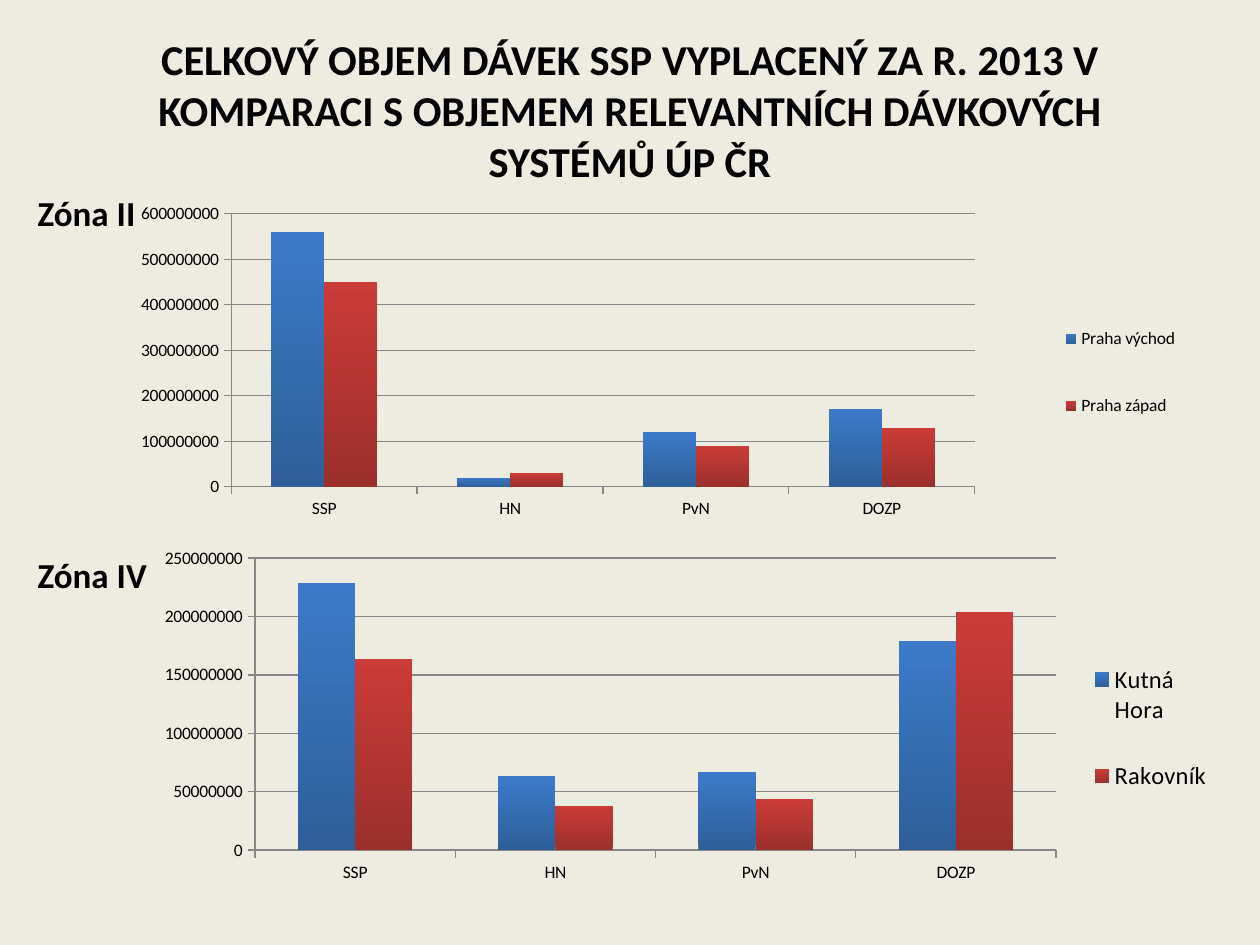
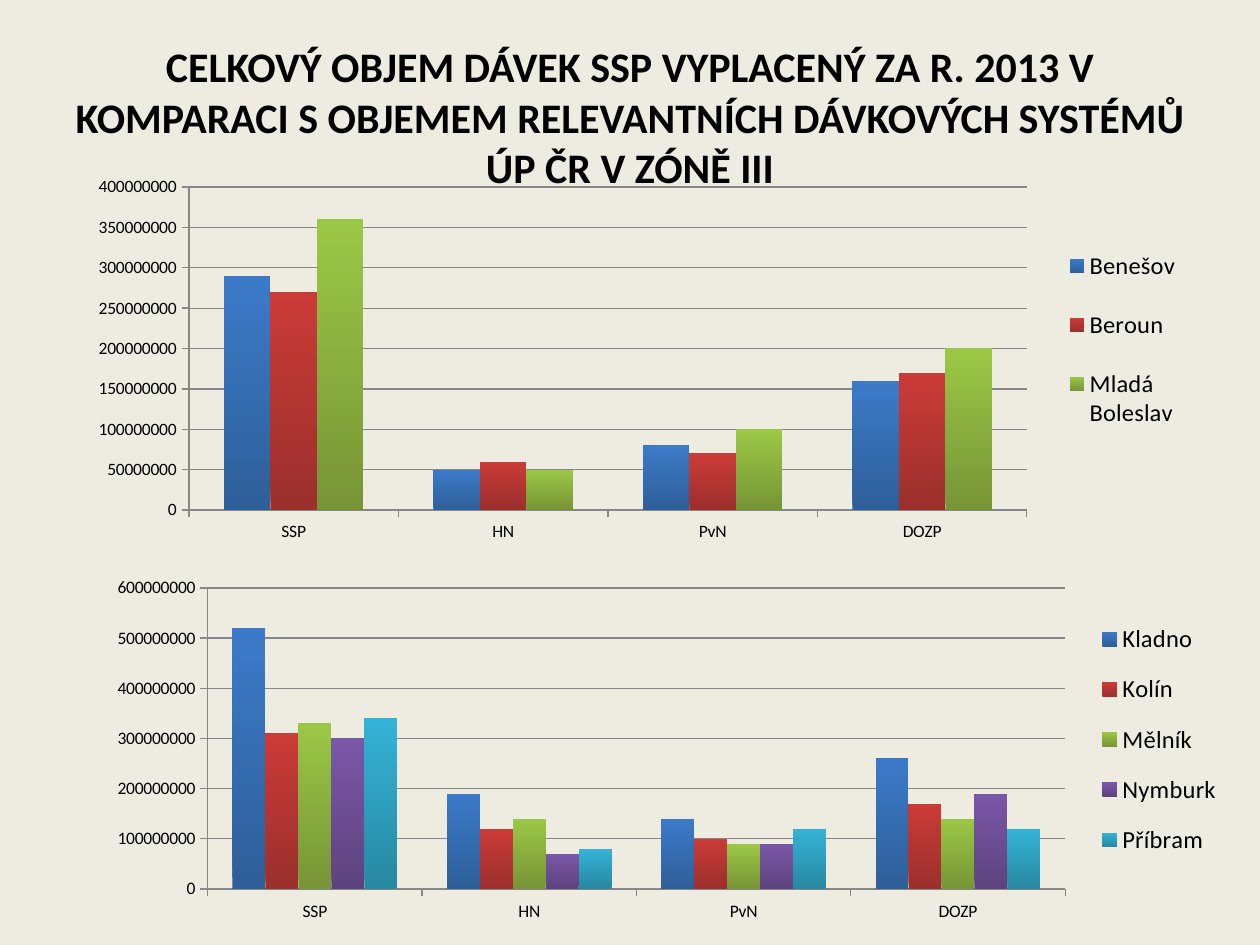
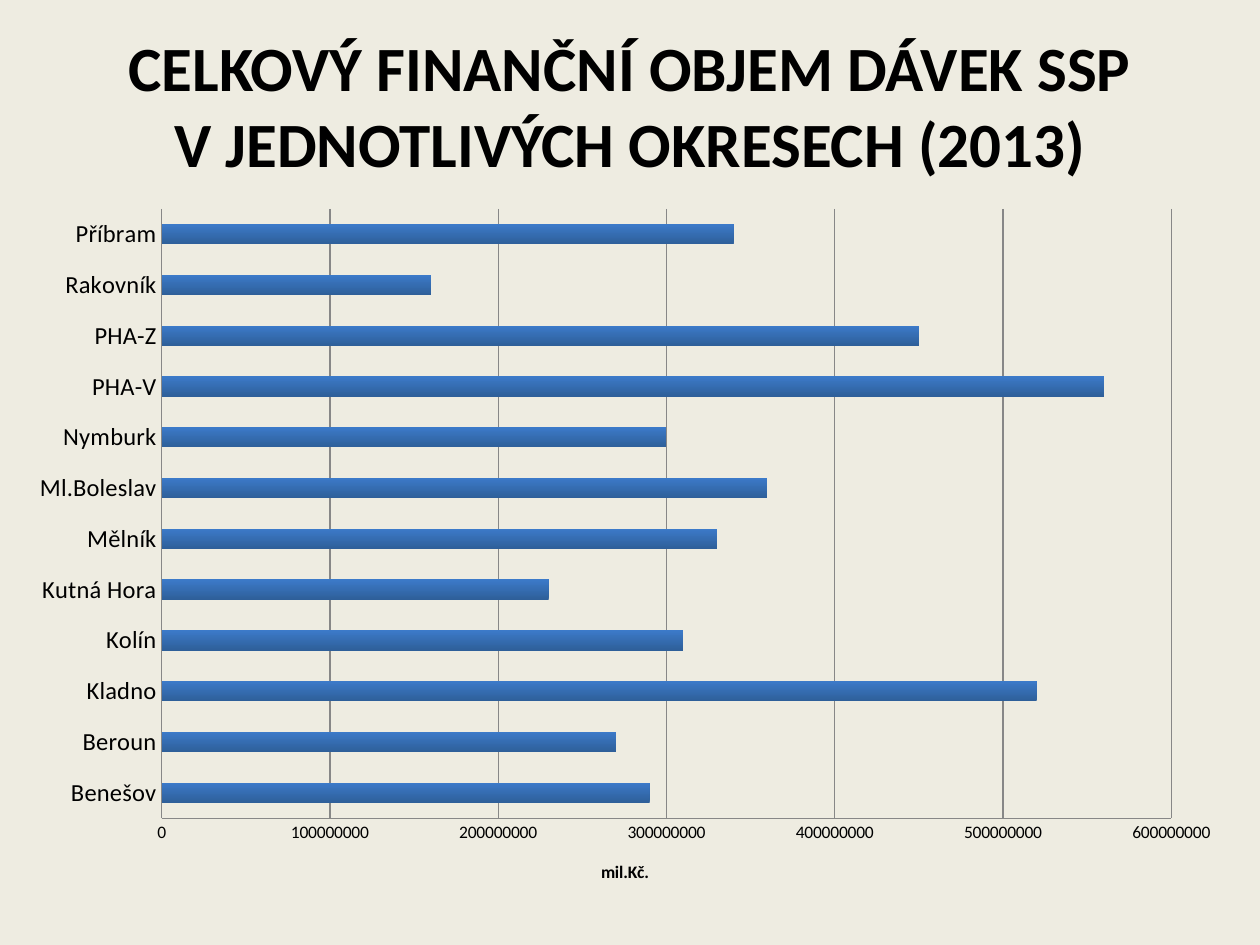
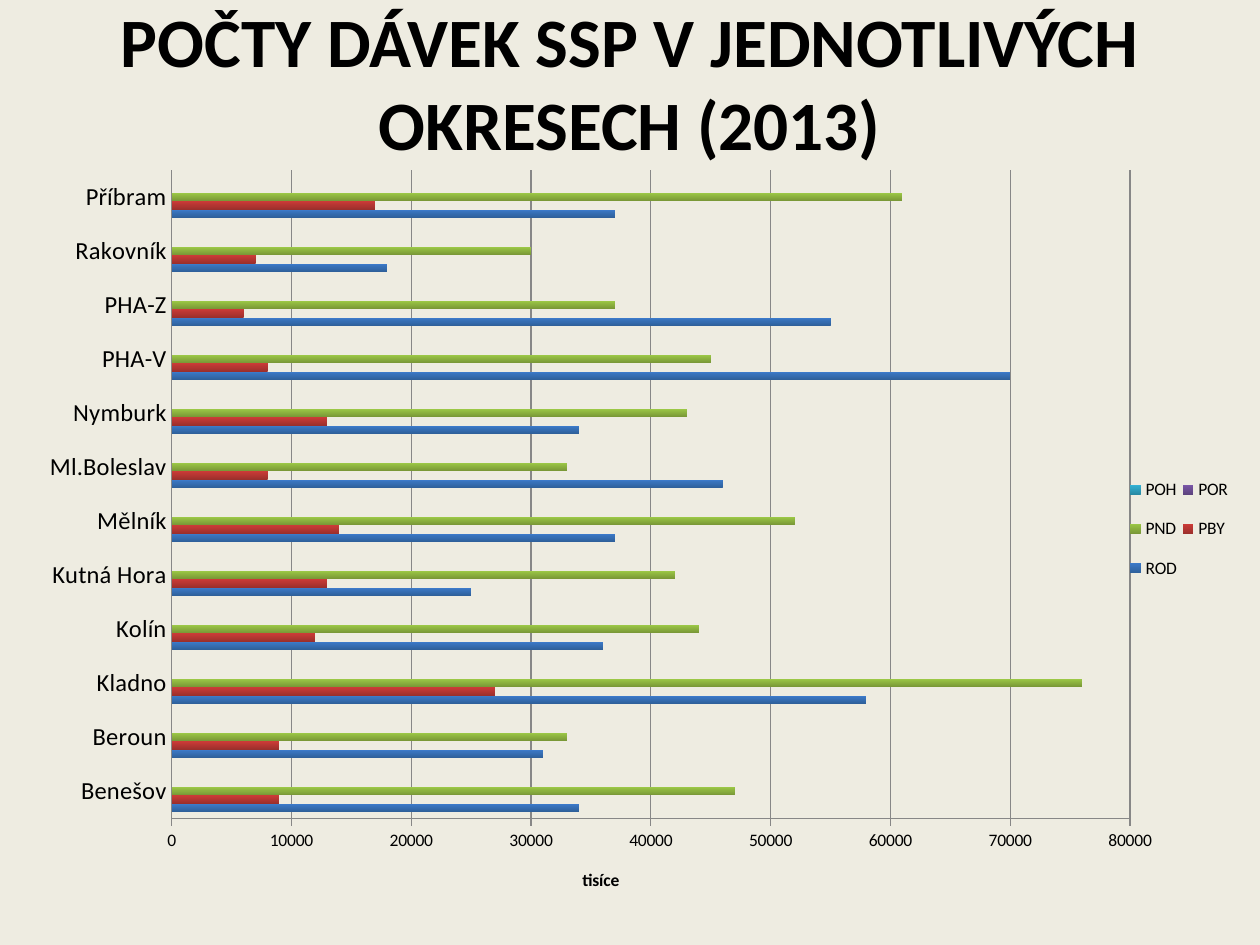
from pptx import Presentation
from pptx.chart.data import CategoryChartData
from pptx.dml.color import RGBColor
from pptx.enum.chart import XL_CHART_TYPE as ChartType, XL_LEGEND_POSITION as LegendPosition
from pptx.enum.chart import XL_TICK_MARK as TickMark
from pptx.enum.text import MSO_ANCHOR as Anchor, PP_ALIGN as Align
from pptx.oxml import parse_xml
from pptx.oxml.ns import nsdecls
from pptx.util import Inches, Pt

# Shared look
FONT, BLACK, GRID, PAPER = "Calibri", "000000", "878787", "EEECE1"
# Each series runs from a dark foot to a light top
SERIES_COLOURS = [("2E5F99", "3C7AC9"), ("9B2F2C", "CB3B37"), ("779536", "9BC746"),
                  ("5D437E", "7B57A8"), ("2888A2", "34B3D6")]
COLUMN, BAR = ChartType.COLUMN_CLUSTERED, ChartType.BAR_CLUSTERED
MILLION, THOUSAND = 1_000_000, 1_000

# Content
BENEFITS = ["SSP", "HN", "PvN", "DOZP"]
DISTRICTS = ["Benešov", "Beroun", "Kladno", "Kolín", "Kutná Hora", "Mělník",
             "Ml.Boleslav", "Nymburk", "PHA-V", "PHA-Z", "Rakovník", "Příbram"]
COMPARISON = ("CELKOVÝ OBJEM DÁVEK SSP VYPLACENÝ ZA R. 2013 V KOMPARACI "
              "S OBJEMEM RELEVANTNÍCH DÁVKOVÝCH SYSTÉMŮ ÚP ČR")

# Boxes are left, top, width, height in inches; plot and legend are shares of the chart.
SLIDES = [
    dict(title=COMPARISON, box=(0.5, 0.36, 9, 1.02), size=24.3,
         zones=["Zóna II", "Zóna IV"],
         charts=[
             dict(kind=COLUMN, box=(0.75, 1.62, 8.9, 2.6), cats=BENEFITS, unit=MILLION,
                  top=600, step=100, plot=(0.122, 0.022, 0.663, 0.84),
                  legend=(0.85, 0.23, 0.13, 0.56), legend_size=10,
                  series={"Praha východ": [560, 20, 120, 170],
                          "Praha západ": [450, 30, 90, 130]}),
             dict(kind=COLUMN, box=(1.14, 4.3, 8.5, 2.76), cats=BENEFITS, unit=MILLION,
                  top=250, step=50, plot=(0.104, 0.047, 0.748, 0.84),
                  legend=(0.88, 0.25, 0.12, 0.57), legend_size=14,
                  series={"Kutná Hora": [229, 63, 67, 179],
                          "Rakovník": [164, 38, 44, 204]})]),
    dict(title=COMPARISON + " V\u00a0ZÓNĚ III", box=(0.5, 0.3, 9, 1.25), size=24,
         charts=[
             dict(kind=COLUMN, box=(0.75, 1.39, 8.82, 2.91), cats=BENEFITS, unit=MILLION,
                  top=400, step=50, plot=(0.085, 0.033, 0.754, 0.892),
                  legend=(0.86, 0.13, 0.13, 0.65), legend_size=14,
                  series={"Benešov": [290, 50, 80, 160],
                          "Beroun": [270, 60, 70, 170],
                          "Mladá Boleslav": [360, 50, 100, 200]}),
             dict(kind=COLUMN, box=(0.75, 4.54, 8.99, 2.83), cats=BENEFITS, unit=MILLION,
                  top=600, step=100, plot=(0.1, 0.045, 0.757, 0.844),
                  legend=(0.88, 0.09, 0.12, 0.76), legend_size=14,
                  series={"Kladno": [520, 190, 140, 260],
                          "Kolín": [310, 120, 100, 170],
                          "Mělník": [330, 140, 90, 140],
                          "Nymburk": [300, 70, 90, 190],
                          "Příbram": [340, 80, 120, 120]})]),
    dict(title="CELKOVÝ FINANČNÍ OBJEM DÁVEK SSP V\u00a0JEDNOTLIVÝCH OKRESECH (2013)",
         box=(0.5, 0.36, 9, 0.94), size=36,
         charts=[
             dict(kind=BAR, box=(0.12, 1.55, 9.69, 5.67), cats=DISTRICTS, unit=MILLION,
                  top=600, step=100, plot=(0.12, 0.019, 0.827, 0.853),
                  axis_title="mil.Kč.", value_tick=TickMark.NONE,
                  series={"Series 1": [290, 270, 520, 310, 230, 330,
                                       360, 300, 560, 450, 160, 340]})]),
    dict(title="POČTY DÁVEK SSP V\u00a0JEDNOTLIVÝCH OKRESECH (2013)",
         box=(0.5, 0.3, 9, 1.25), size=39.6, foot=0.61,
         charts=[
             dict(kind=BAR, box=(0.2, 1.23, 9.69, 6.06), cats=DISTRICTS, unit=THOUSAND,
                  top=80, step=10, plot=(0.12, 0.02, 0.785, 0.849),
                  legend=(0.9, 0.4, 0.09, 0.18), legend_size=10, axis_title="tisíce",
                  series={"ROD": [34, 31, 58, 36, 25, 37, 46, 34, 70, 55, 18, 37],
                          "PBY": [9, 9, 27, 12, 13, 14, 8, 13, 8, 6, 7, 17],
                          "PND": [47, 33, 76, 44, 42, 52, 33, 43, 45, 37, 30, 61],
                          "POR": [0] * 12,
                          "POH": [0] * 12})]),
]


def colour(hex_string):
    return RGBColor.from_string(hex_string)


def style_font(font, size, bold=False):
    font.name, font.size, font.bold = FONT, Pt(size), bold
    font.color.rgb = colour(BLACK)


def add_text(page, lines, box, size, align=Align.LEFT, anchor=Anchor.TOP,
             gap=0, side=0.1, foot=0.05):
    frame = page.shapes.add_textbox(*map(Inches, box)).text_frame
    frame.word_wrap, frame.vertical_anchor = True, anchor
    frame.margin_left = frame.margin_right = Inches(side)
    frame.margin_bottom = Inches(foot)
    frame.text = "\n".join(lines)
    for index, para in enumerate(frame.paragraphs):
        para.alignment = align
        para.space_before = Pt(gap if index else 0)
        for span in para.runs:
            style_font(span.font, size, bold=True)


def place(parent, index, shares, inner=False):
    """Fix a plot area or legend at shares of its chart."""
    for layout in parent.xpath("c:layout"):
        parent.remove(layout)
    target = '<c:layoutTarget val="inner"/>' if inner else ""
    modes = '<c:xMode val="edge"/><c:yMode val="edge"/>'
    sizes = "".join(f'<c:{name} val="{share}"/>' for name, share in zip("xywh", shares))
    parent.insert(index, parse_xml(
        f'<c:layout {nsdecls("c")}><c:manualLayout>{target}{modes}{sizes}'
        '</c:manualLayout></c:layout>'))


def style_line(line):
    line.color.rgb, line.width = colour(GRID), Pt(0.75)


def add_axes(chart, item):
    is_bar = item["kind"] == BAR
    cats, values = chart.category_axis, chart.value_axis
    cats.major_tick_mark = TickMark.NONE if is_bar else TickMark.OUTSIDE
    values.major_tick_mark = item.get("value_tick", TickMark.OUTSIDE)
    for axis, size in ((cats, 14 if is_bar else 10), (values, 10)):
        axis.minor_tick_mark = TickMark.NONE
        style_font(axis.tick_labels.font, size)
        style_line(axis.format.line)
    values.minimum_scale = 0
    values.maximum_scale = item["top"] * item["unit"]
    values.major_unit = item["step"] * item["unit"]
    values.has_major_gridlines = True
    style_line(values.major_gridlines.format.line)
    if "axis_title" in item:
        frame = values.axis_title.text_frame
        frame.text = item["axis_title"]
        style_font(frame.paragraphs[0].runs[0].font, 10, bold=True)


def add_chart(page, item):
    data = CategoryChartData(number_format="General")
    data.categories = item["cats"]
    for name, numbers in item["series"].items():
        data.add_series(name, [number * item["unit"] for number in numbers])
    chart = page.shapes.add_chart(item["kind"], *map(Inches, item["box"]), data).chart
    chart.has_title = False
    style_font(chart.font, 10)
    add_axes(chart, item)

    # Bars
    plot = chart.plots[0]
    plot.gap_width, plot.overlap, plot.vary_by_categories = 150, 0, False
    for series, shades in zip(plot.series, SERIES_COLOURS):
        fill = series.format.fill
        fill.gradient()
        fill.gradient_angle = 90
        for stop, shade in zip(fill.gradient_stops, shades):
            stop.color.rgb = colour(shade)
    place(chart.element.xpath("c:chart/c:plotArea")[0], 0, item["plot"], inner=True)

    # Legend
    chart.has_legend = "legend" in item
    if chart.has_legend:
        chart.legend.position = LegendPosition.RIGHT
        chart.legend.include_in_layout = False
        style_font(chart.legend.font, item["legend_size"])
        place(chart.element.xpath("c:chart/c:legend")[0], 1, item["legend"])


def main():
    deck = Presentation()
    deck.slide_width, deck.slide_height = Inches(10), Inches(7.5)
    for content in SLIDES:
        page = deck.slides.add_slide(deck.slide_layouts[6])
        page.background.fill.solid()
        page.background.fill.fore_color.rgb = colour(PAPER)
        add_text(page, [content["title"]], content["box"], content["size"], Align.CENTER,
                 Anchor.MIDDLE, side=0.08, foot=content.get("foot", 0.05))
        if "zones" in content:
            add_text(page, content["zones"], (0.2, 1.47, 1.1, 5.43), 20, gap=183)
        for item in content["charts"]:
            add_chart(page, item)
    deck.save("out.pptx")


if __name__ == "__main__":
    main()
